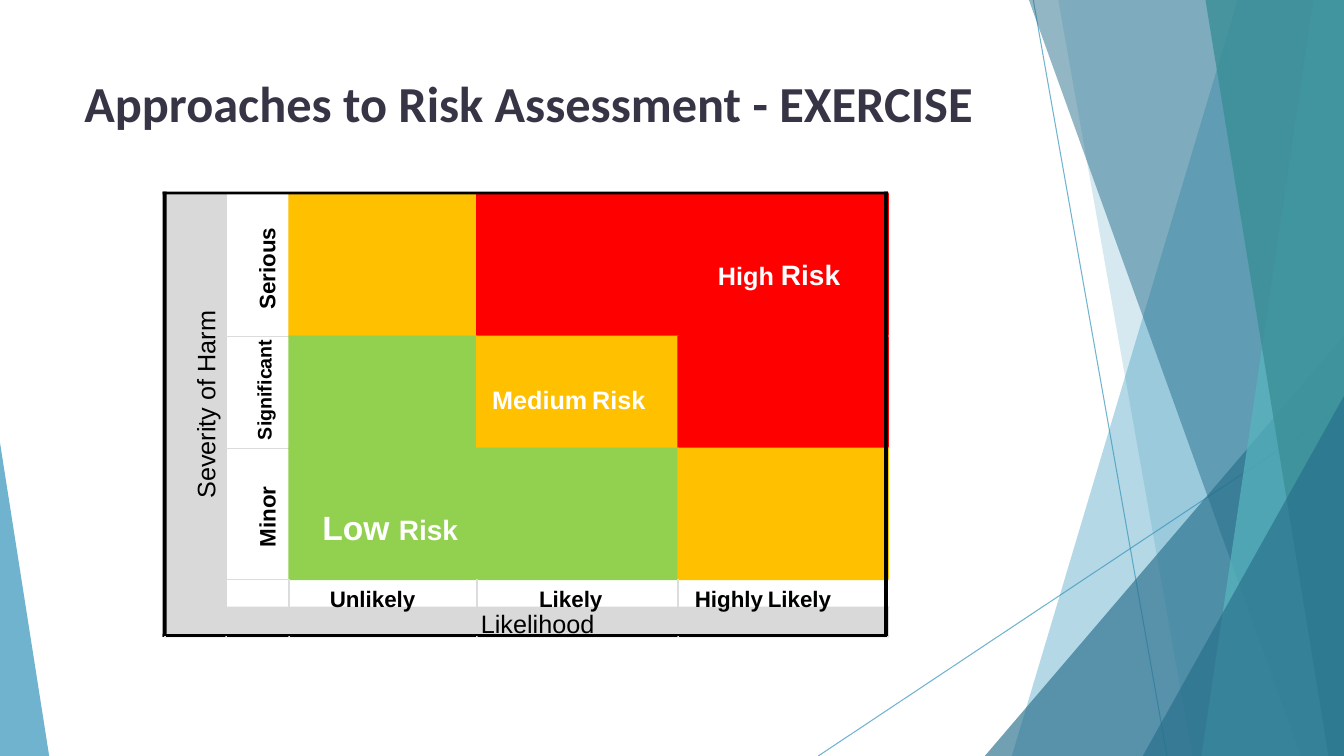
from lxml.etree import SubElement as Sub
from pptx import Presentation
from pptx.dml.color import RGBColor
from pptx.enum.shapes import MSO_CONNECTOR as Link, MSO_SHAPE as Shape
from pptx.enum.text import MSO_AUTO_SIZE as Fit, PP_ALIGN as Align
from pptx.oxml.ns import qn
from pptx.util import Cm, Pt

WIDE, HIGH = 33.87, 19.05
BLACK = RGBColor(0x00, 0x00, 0x00)
WHITE = RGBColor(0xFF, 0xFF, 0xFF)
INK = RGBColor(0x37, 0x35, 0x45)
BLUE = RGBColor(0x34, 0x94, 0xBA)
NAVY = RGBColor(0x27, 0x6F, 0x8B)
AQUA = RGBColor(0x58, 0xB6, 0xC0)
TEAL = RGBColor(0x3A, 0x8F, 0x98)
GREY = RGBColor(0xD9, 0xD9, 0xD9)
RULE = RGBColor(0xDA, 0xDC, 0xDD)
RED = RGBColor(0xFF, 0x00, 0x00)
AMBER = RGBColor(0xFF, 0xC0, 0x00)
GREEN = RGBColor(0x92, 0xD0, 0x50)

# Edges of the matrix: severity title, severity, three likelihoods
COLS = [4.14, 5.68, 7.27, 12, 17.07, 22.36]
# Edges of the matrix: three severities, likelihood, likelihood title
ROWS = [4.85, 8.46, 11.28, 14.58, 15.29, 16.02]
LAP = 0.04  # overlap that hides the seams between zones

# First column, last column, first row, last row, colour
ZONES = [
    *((0, 1, row, row + 1, GREY) for row in range(4)), (0, 5, 4, 5, GREY),
    (2, 3, 0, 1, AMBER), (3, 5, 0, 1, RED),
    (2, 3, 1, 2, GREEN), (3, 4, 1, 2, AMBER), (4, 5, 1, 2, RED),
    (2, 4, 2, 3, GREEN), (4, 5, 2, 3, AMBER),
]

# Place, runs of text and size, colour, bold, turn
LABELS = [
    ((5.74, 6.12, 2.01, 1.3), [("Serious", 16)], BLACK, True, 270),
    ((5.21, 9.3, 2.79, 1.04), [("Significant", 14)], BLACK, True, 270),
    ((5.87, 12.5, 1.5, 1.04), [("Minor", 16)], BLACK, True, 270),
    ((2.9, 9.42, 4.75, 1.55), [("Severity of Harm", 18)], BLACK, False, 270),
    ((17.96, 6.35, 3.35, 0.99), [("High ", 18), ("Risk", 20)], WHITE, True, 0),
    ((12.24, 9.56, 4.19, 0.89), [("Medium", 18), (" ", 12), ("Risk", 18)],
     WHITE, True, 0),
    ((7.98, 12.62, 3.71, 1.19), [("Low ", 24), ("Risk", 20)], WHITE, True, 0),
    ((8.21, 14.64, 2.36, 0.74), [("Unlikely", 16)], BLACK, True, 0),
    ((13.51, 14.64, 1.75, 0.74), [("Likely", 16)], BLACK, True, 0),
    ((17.35, 14.64, 3.76, 0.79), [("Highly", 16), (" ", 12), ("Likely", 16)],
     BLACK, True, 0),
    ((12, 15.21, 3.1, 0.84), [("Likelihood", 18)], BLACK, False, 0),
]


def fade(shape, rate):
    """Set the opacity, in percent, of the shape's first solid colour."""
    tint = next(shape._element.spPr.iter(qn("a:srgbClr")))
    Sub(tint, qn("a:alpha")).set("val", str(rate * 1000))


def paint(shape, tone, rate=100):
    shape.shadow.inherit = False
    shape.fill.solid()
    shape.fill.fore_color.rgb = tone
    shape.line.fill.background()
    if rate < 100:
        fade(shape, rate)


def block(slide, left, top, right, foot, tone):
    box = slide.shapes.add_shape(
        Shape.RECTANGLE, Cm(left), Cm(top), Cm(right - left), Cm(foot - top))
    paint(box, tone)


def line(slide, start, end, tone, width, rate=100):
    rod = slide.shapes.add_connector(
        Link.STRAIGHT, *(Cm(n) for n in (*start, *end)))
    rod.line.color.rgb = tone
    rod.line.width = Pt(width)
    if rate < 100:
        fade(rod, rate)
    Sub(rod._element.spPr, qn("a:effectLst"))


def pane(slide, top, foot, tone, rate):
    """Draw a full-height pane from a slanted left side to the slide's edge."""
    pen = slide.shapes.build_freeform(Cm(top), Cm(0))
    ends = [(WIDE, 0), (WIDE, HIGH), (foot, HIGH)]
    pen.add_line_segments([(Cm(x), Cm(y)) for x, y in ends], close=True)
    paint(pen.convert_to_shape(), tone, rate)


def wedge(slide, left, top, width, peak, tone, rate):
    """Draw a triangle on the slide's foot; peak runs from 0 to 1."""
    tri = slide.shapes.add_shape(
        Shape.ISOSCELES_TRIANGLE, Cm(left), Cm(top), Cm(width), Cm(HIGH - top))
    tri.adjustments[0] = peak
    paint(tri, tone, rate)


def write(par, text, size, face, tone, bold):
    run = par.add_run()
    run.text = text
    font = run.font
    font.name, font.size, font.bold = face, Pt(size), bold
    font.color.rgb = tone


def label(slide, place, runs, tone, bold, turn):
    box = slide.shapes.add_textbox(*(Cm(n) for n in place))
    box.rotation = turn
    frame = box.text_frame
    frame.margin_left = frame.margin_right = frame.margin_bottom = 0
    frame.margin_top = Cm(0.18) if turn else 0
    frame.word_wrap = False
    frame.auto_size = Fit.NONE if turn else Fit.SHAPE_TO_FIT_TEXT
    par = frame.paragraphs[0]
    par.alignment = Align.CENTER
    par.line_spacing = 1.15
    par.space_after = Pt(10)
    for text, size in runs:
        write(par, text, size, "Arial", tone, bold)


def title(slide, text):
    box = slide.shapes.add_textbox(Cm(1.88), Cm(1.7), Cm(23.88), Cm(2.62))
    box.text_frame.word_wrap = True
    write(box.text_frame.paragraphs[0], text, 36, "Calibri", INK, True)


def facets(slide):
    line(slide, (26.04, 0), (29.41, HIGH), BLUE, 0.75, 70)
    line(slide, (WIDE, 10.24), (20.62, HIGH), BLUE, 0.75, 70)
    pane(slide, 31.19, 25.5, BLUE, 36)
    pane(slide, 26.67, 30.05, BLUE, 20)
    wedge(slide, 24.82, 8.46, 9.05, 1, NAVY, 66)
    pane(slide, 25.93, 32.79, NAVY, 50)
    pane(slide, 33.1, 30.28, AQUA, 70)
    pane(slide, 30.38, 33.48, TEAL, 80)
    wedge(slide, 28.8, 9.98, 5.07, 1, NAVY, 66)
    wedge(slide, 0, 11.15, 1.24, 0, BLUE, 70)


def border(slide):
    """Frame the matrix, with small ticks at its right and lower edges."""
    left, right, top, foot = 4.1, 22.38, 4.83, 16.05
    for y in (top, foot - 0.07):
        block(slide, left, y, right, y + 0.07, BLACK)
    for x in (left, right - 0.1):
        block(slide, x, top, x + 0.1, foot, BLACK)
    for x in COLS:
        block(slide, x, foot - 0.02, x + 0.04, foot, RULE)
    for y in ROWS:
        block(slide, right, y, right + 0.04, y + 0.02, RULE)


def matrix(slide):
    for left, right, top, foot, tone in ZONES:
        block(slide, COLS[left], ROWS[top],
              COLS[right] + LAP, ROWS[foot] + LAP, tone)
    for item in LABELS:
        label(slide, *item)
    for y in ROWS[1:4]:
        line(slide, (COLS[1], y + 0.02), (COLS[2], y + 0.02), RULE, 1)
    for x in COLS[2:5]:
        line(slide, (x + 0.02, ROWS[3]), (x + 0.02, ROWS[4]), RULE, 1.25)
    border(slide)


def main():
    deck = Presentation()
    deck.slide_width, deck.slide_height = Cm(WIDE), Cm(HIGH)
    slide = deck.slides.add_slide(deck.slide_layouts[6])
    facets(slide)
    title(slide, "Approaches to Risk Assessment - EXERCISE")
    matrix(slide)
    deck.save("out.pptx")


if __name__ == "__main__":
    main()
